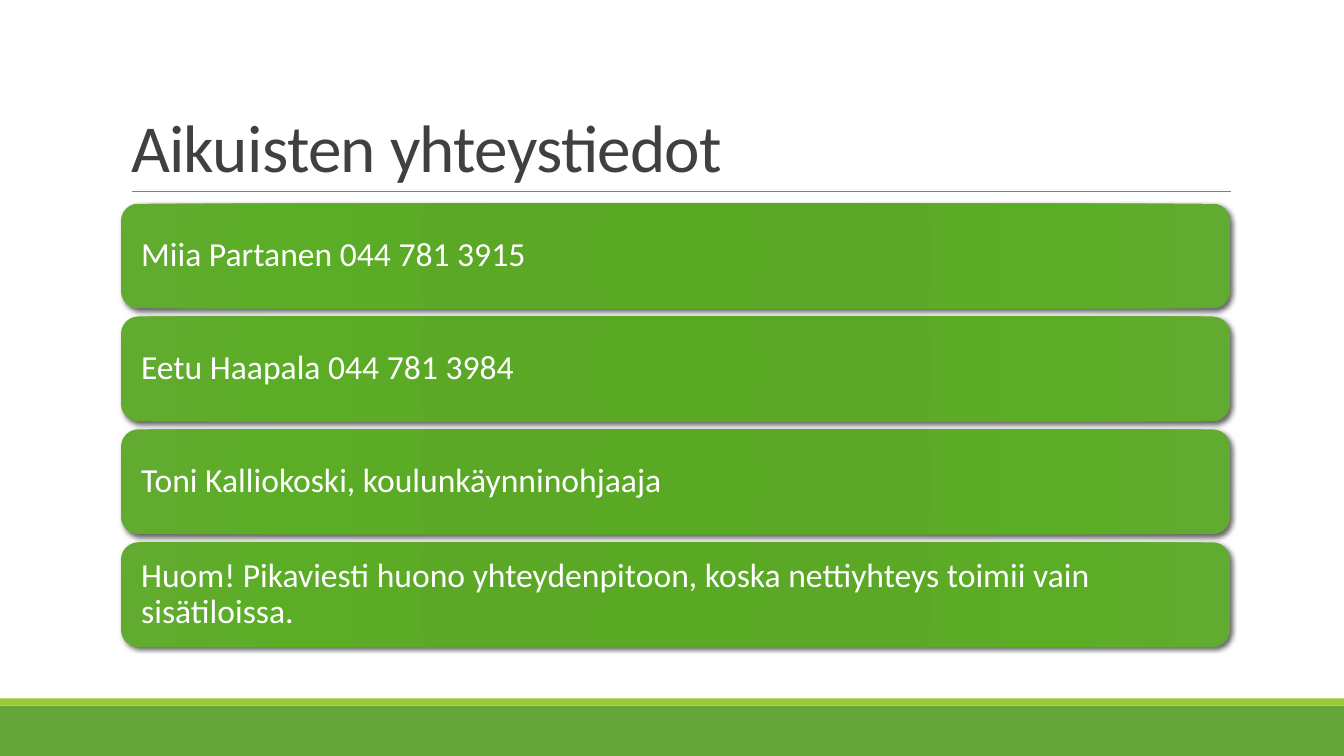
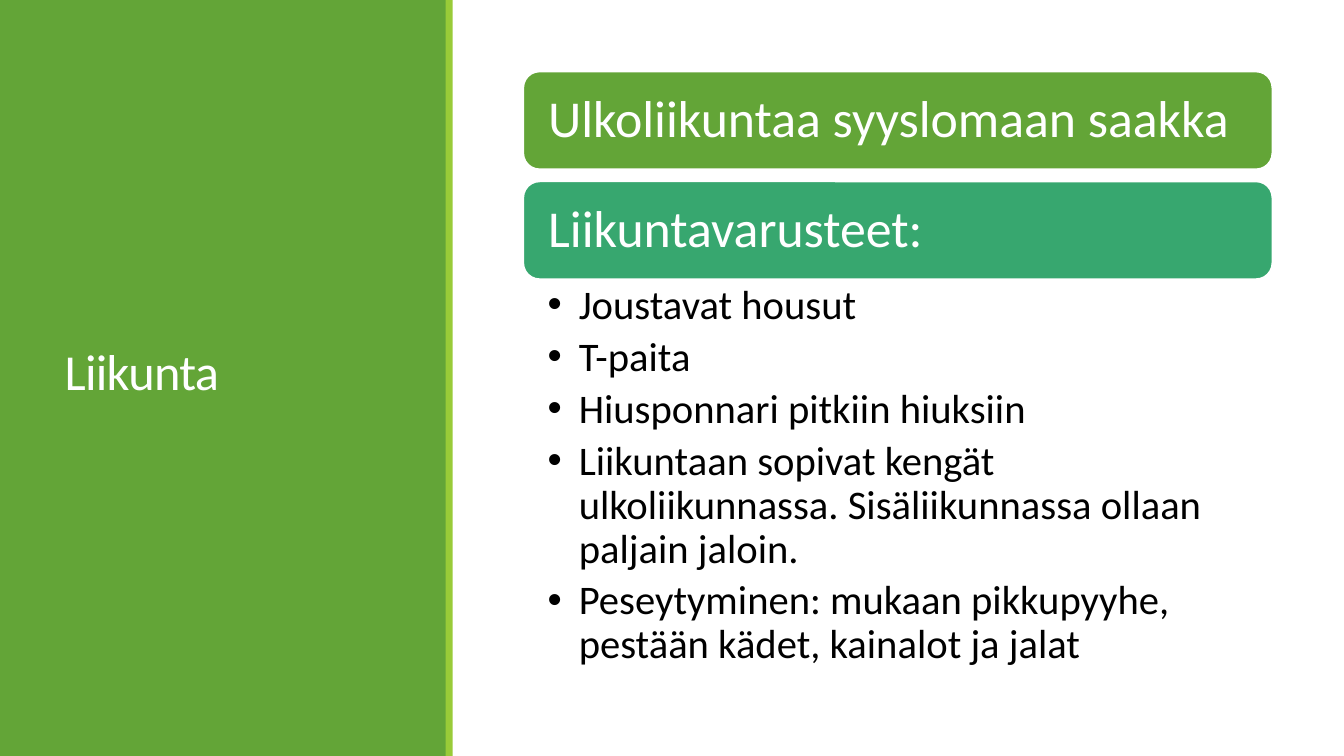
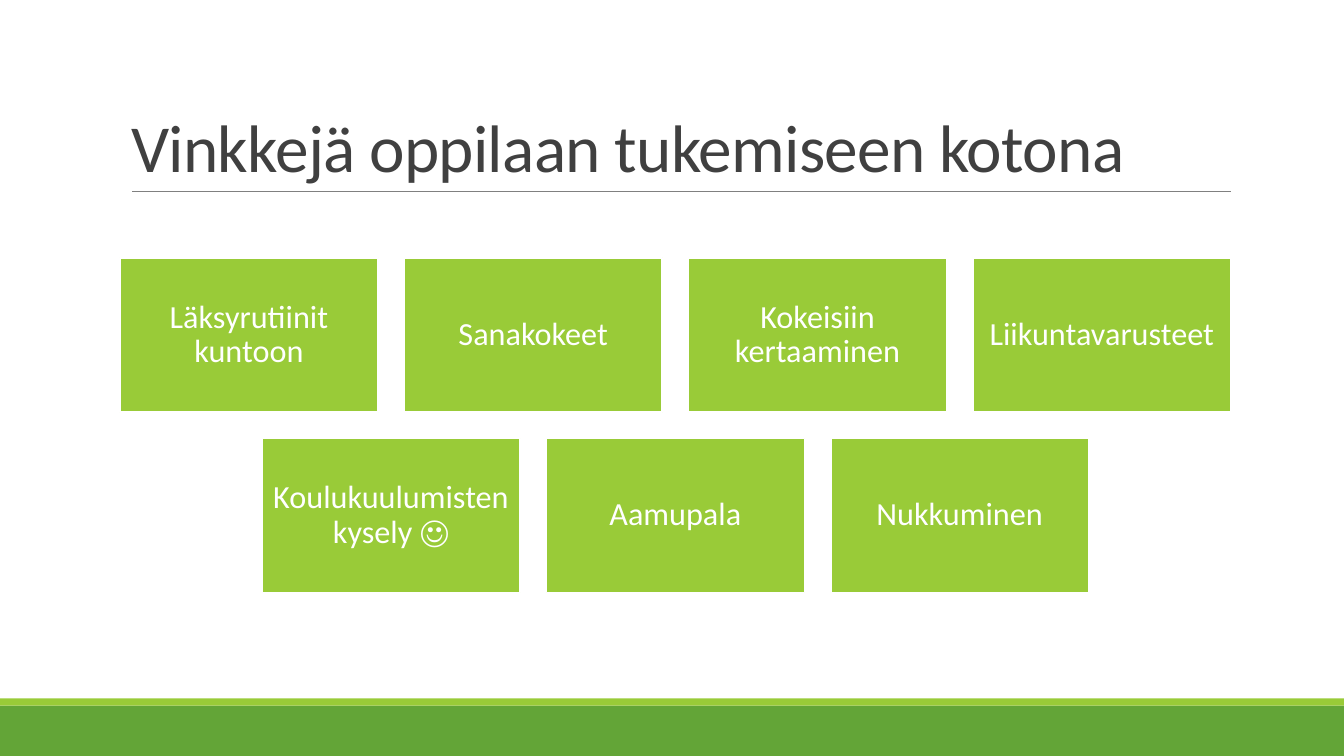
"""Builds three slides for a parents' evening: contacts, sports and tips for home."""
from lxml import etree
from pptx import Presentation
from pptx.dml.color import RGBColor
from pptx.enum.shapes import MSO_CONNECTOR, MSO_SHAPE
from pptx.enum.text import MSO_ANCHOR, MSO_AUTO_SIZE, PP_ALIGN
from pptx.oxml.ns import qn
from pptx.util import Inches, Pt

RECT, ROUNDED = MSO_SHAPE.RECTANGLE, MSO_SHAPE.ROUNDED_RECTANGLE
STRAIGHT = MSO_CONNECTOR.STRAIGHT
TOP, MIDDLE, BOTTOM = MSO_ANCHOR.TOP, MSO_ANCHOR.MIDDLE, MSO_ANCHOR.BOTTOM
LEFT, CENTER = PP_ALIGN.LEFT, PP_ALIGN.CENTER
NO_FIT = MSO_AUTO_SIZE.NONE

COLORS = {
    "green": "63A537",
    "lime": "99CB38",
    "teal": "37A76F",
    "heading": "404040",
    "rule": "808080",
    "white": "FFFFFF",
    "black": "000000",
}
GLOW = [(0, "59A924"), (34, "5BA827"), (70, "5BAD25"), (100, "62AB31")]
FONT = "Calibri"
WIDTH, HEIGHT = 13.33, 7.5
TITLE_AND_BODY, TITLE_ONLY = 1, 5


def rgb(name):
    return RGBColor.from_string(COLORS[name])


def child(parent, tag, **attributes):
    return etree.SubElement(parent, qn(tag), {k: str(v) for k, v in attributes.items()})


class Deck:
    """Holds the shared style and the slide being built."""

    def __init__(self):
        self.prs = Presentation()
        self.prs.slide_width, self.prs.slide_height = Inches(WIDTH), Inches(HEIGHT)
        self.slide = None

    def new_slide(self, layout):
        self.slide = self.prs.slides.add_slide(self.prs.slide_layouts[layout])

    def headed_slide(self, heading):
        self.new_slide(TITLE_ONLY)
        self.block(RECT, (0, 7, WIDTH, 0.5), "green")
        self.block(RECT, (0, 6.93, WIDTH, 0.07), "lime")
        self.rule(1.31, 12.21, 1.9)
        self.title(heading, (1.2, 0.31, 11, 1.59), 48, "heading", BOTTOM)

    def side_panel_slide(self, heading):
        self.new_slide(TITLE_AND_BODY)
        self.block(RECT, (0, 0, 4.43, HEIGHT), "green")
        self.block(RECT, (4.42, 0, 0.07, HEIGHT), "lime")
        self.title(heading, (0.54, 0.57, 3.37, 6.31), 36, "white", MIDDLE)

    def place(self, shape, box):
        shape.left, shape.top, shape.width, shape.height = map(Inches, box)

    def frame(self, shape, anchor, insets):
        frame = shape.text_frame
        frame.word_wrap, frame.auto_size = True, NO_FIT
        frame.vertical_anchor = anchor
        (frame.margin_left, frame.margin_top,
         frame.margin_right, frame.margin_bottom) = map(Inches, insets)
        return frame

    def add_text(self, paragraph, text, size, color, align=LEFT, spacing=0.9):
        paragraph.alignment, paragraph.line_spacing = align, spacing
        paragraph.space_before = Pt(0)
        run = paragraph.add_run()
        run.text = text
        run.font.name, run.font.size = FONT, Pt(size)
        run.font.color.rgb = rgb(color)
        return run

    def title(self, text, box, size, color, anchor):
        title = self.slide.shapes.title
        self.place(title, box)
        self.slide.shapes._spTree.append(title._element)
        frame = self.frame(title, anchor, (0.1, 0.05, 0.1, 0.05))
        run = self.add_text(frame.paragraphs[0], text, size, color, spacing=0.85)
        run._r.get_or_add_rPr().set("spc", "-50")

    def rule(self, start, end, y):
        line = self.slide.shapes.add_connector(
            STRAIGHT, Inches(start), Inches(y), Inches(end), Inches(y))
        line.line.color.rgb, line.line.width = rgb("rule"), Pt(0.5)
        child(line._element.spPr, "a:effectLst")

    def block(self, kind, box, color, outlined=False):
        block = self.slide.shapes.add_shape(kind, *map(Inches, box))
        block.shadow.inherit = False
        block.fill.solid()
        block.fill.fore_color.rgb = rgb(color)
        if outlined:
            block.line.color.rgb, block.line.width = rgb("white"), Pt(1.25)
        else:
            block.line.fill.background()
        return block

    def card(self, kind, box, color, text, size, inset, align=LEFT, outlined=True):
        card = self.block(kind, box, color, outlined)
        frame = self.frame(card, MIDDLE, [inset] * 4)
        self.add_text(frame.paragraphs[0], text, size, "white", align)
        return card

    def glow(self, card):
        properties = card._element.spPr
        gradient = etree.Element(qn("a:gradFill"), rotWithShape="1")
        stops = child(gradient, "a:gsLst")
        for position, color in GLOW:
            stop = child(stops, "a:gs", pos=position * 1000)
            child(stop, "a:srgbClr", val=color)
        circle = child(gradient, "a:path", path="circle")
        child(circle, "a:fillToRect", l=100000, t=100000, r=100000, b=100000)
        properties.replace(properties.find(qn("a:solidFill")), gradient)
        shadow = child(properties.find(qn("a:effectLst")), "a:outerShdw",
                       blurRad=Pt(3.5), dist=Pt(2), dir=45 * 60000, rotWithShape=0)
        child(child(shadow, "a:srgbClr", val=COLORS["black"]), "a:alpha", val=60000)

    def bullets(self, items, box, size):
        body = self.slide.placeholders[1]
        self.place(body, box)
        frame = self.frame(body, TOP, (0.24, 0.05, 0.29, 0.05))
        for i, item in enumerate(items):
            paragraph = frame.add_paragraph() if i else frame.paragraphs[0]
            properties = paragraph._p.get_or_add_pPr()
            properties.set("marL", str(Inches(0.31)))
            properties.set("indent", str(-Inches(0.31)))
            self.add_text(paragraph, item, size, "black")
            paragraph.space_after = Pt(size * 0.2)


def contacts(deck):
    deck.headed_slide("Aikuisten yhteystiedot")
    lines = [
        "Miia Partanen 044 781 3915",
        "Eetu Haapala 044 781 3984",
        "Toni Kalliokoski, koulunkäynninohjaaja",
        "Huom! Pikaviesti huono yhteydenpitoon, koska nettiyhteys toimii vain sisätiloissa.",
    ]
    for i, line in enumerate(lines):
        box = (1.2, 2.02 + i * 1.12, 11, 1.04)
        deck.glow(deck.card(ROUNDED, box, "green", line, 24, 0.15, outlined=False))


def sports(deck):
    deck.side_panel_slide("Liikunta")
    headings = [("Ulkoliikuntaa syyslomaan saakka", "green"), ("Liikuntavarusteet:", "teal")]
    for i, (heading, color) in enumerate(headings):
        deck.card(ROUNDED, (5.19, 0.71 + i * 1.09, 7.43, 0.97), color, heading, 37, 0.2)
    deck.bullets([
        "Joustavat housut",
        "T-paita",
        "Hiusponnari pitkiin hiuksiin",
        "Liikuntaan sopivat kengät ulkoliikunnassa. Sisäliikunnassa ollaan paljain jaloin.",
        "Peseytyminen: mukaan pikkupyyhe, pestään kädet, kainalot ja jalat",
    ], (5.19, 2.77, 7.43, 4.1), 29)


def tips(deck):
    deck.headed_slide("Vinkkejä oppilaan tukemiseen kotona")
    rows = [
        ["Läksyrutiinit kuntoon", "Sanakokeet", "Kokeisiin kertaaminen", "Liikuntavarusteet"],
        ["Koulukuulumisten kysely ☺", "Aamupala", "Nukkuminen"],
    ]
    width, height, gap, middle = 2.56, 1.53, 0.26, 6.7
    for r, row in enumerate(rows):
        left = middle - (len(row) * (width + gap) - gap) / 2
        for c, tip in enumerate(row):
            box = (left + c * (width + gap), 2.56 + r * (height + gap), width, height)
            deck.card(RECT, box, "lime", tip, 23, 0.1, CENTER)


def main():
    deck = Deck()
    contacts(deck)
    sports(deck)
    tips(deck)
    deck.prs.save("out.pptx")


if __name__ == "__main__":
    main()
